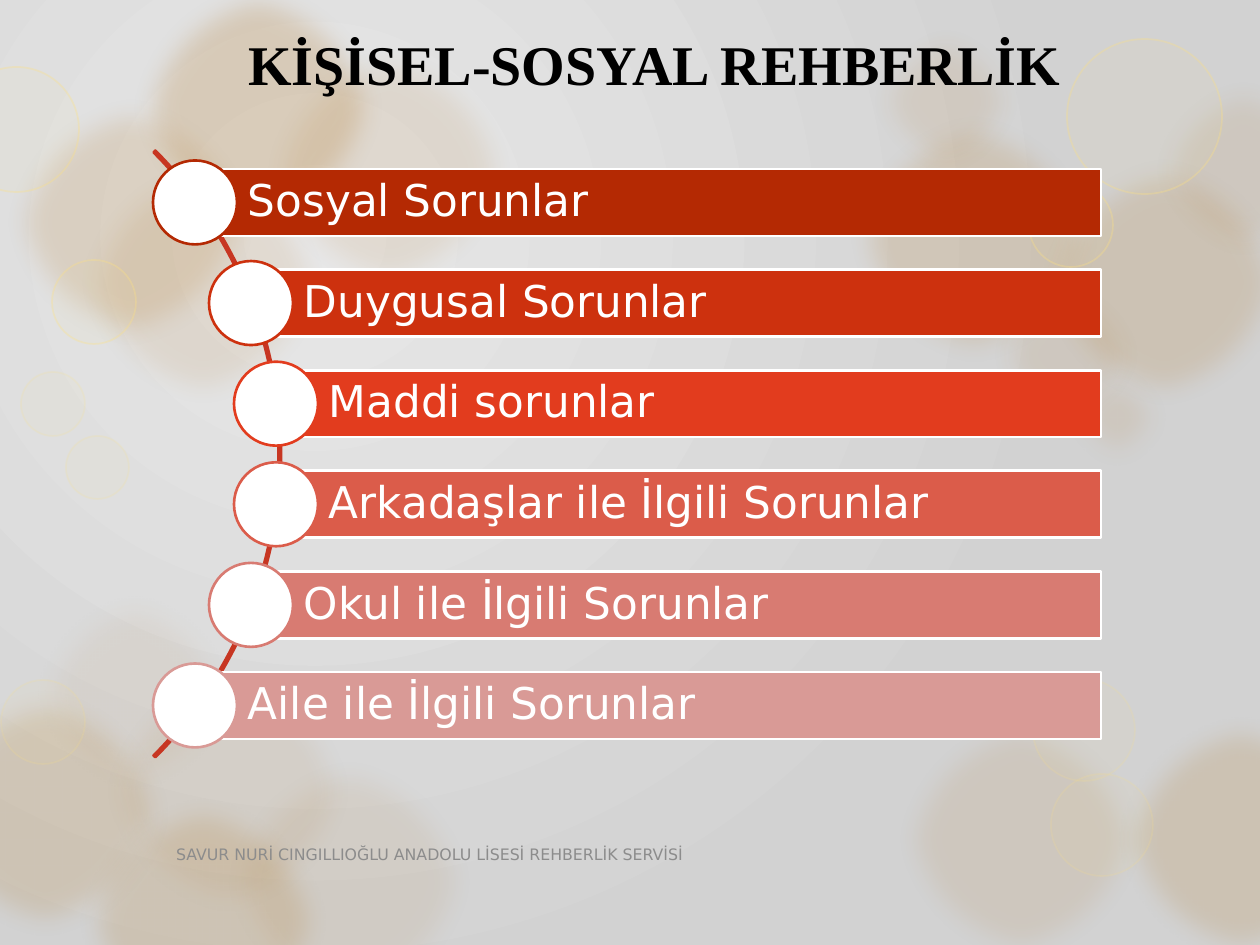
"""Builds the slide on personal and social guidance topics."""
from lxml import etree
from pptx import Presentation
from pptx import util as u
from pptx.dml.color import RGBColor
from pptx.enum import shapes, text
from pptx.oxml import ns

PX = 914400 // 126
WIDTH, HEIGHT = 1260, 945

WHITE = RGBColor(0xFF, 0xFF, 0xFF)
BLACK = RGBColor(0x00, 0x00, 0x00)
GREY = RGBColor(0x8C, 0x8C, 0x8C)
LIGHT = RGBColor(0xE7, 0xE7, 0xE7)
DARK = RGBColor(0xD2, 0xD2, 0xD2)
BROWN = RGBColor(0xAE, 0x6D, 0x11)
SAND = RGBColor(0xF1, 0xBD, 0x74)
YELLOW = RGBColor(0xFF, 0xE2, 0x81)
ARC_RED = RGBColor(0xC7, 0x36, 0x22)

TITLE = "KİŞİSEL-SOSYAL REHBERLİK"
FOOTER = "SAVUR NURİ CINGILLIOĞLU ANADOLU LİSESİ REHBERLİK SERVİSİ"
TOPICS = [
    ("Sosyal Sorunlar", 195, RGBColor(0xB4, 0x29, 0x03)),
    ("Duygusal Sorunlar", 251, RGBColor(0xCD, 0x31, 0x0E)),
    ("Maddi sorunlar", 276, RGBColor(0xE2, 0x3C, 0x1E)),
    ("Arkadaşlar ile İlgili Sorunlar", 276, RGBColor(0xDB, 0x5C, 0x4A)),
    ("Okul ile İlgili Sorunlar", 251, RGBColor(0xD8, 0x7B, 0x72)),
    ("Aile ile İlgili Sorunlar", 195, RGBColor(0xD9, 0x9A, 0x96)),
]
TOPIC_TOP, TOPIC_PITCH, BAR_HEIGHT, BAR_RIGHT, DOT = 169, 100.6, 67, 1101, 84

# fill, fill opacity, line (colour, points, opacity), blur, circles (left, top, diameter)
BUBBLES = [
    (BROWN, 8, None, 25, [(97, 660, 263), (218, 751, 263)]),
    (BROWN, 10, None, 25, [(72, 151, 263), (258, 39, 263), (890, 708, 263)]),
    (BROWN, 15, None, 25, [(0, 91, 263), (1033, 151, 263), (843, 108, 263)]),
    (BROWN, 16, None, 25, [(72, 790, 263), (1110, 708, 263), (-86, 682, 263)]),
    (BROWN, 20, None, 25, [(127, -23, 263)]),
    (BROWN, 10, (SAND, 14, 6), 25, [(1157, 82, 173), (874, 29, 144),
                                    (994, 282, 144), (1067, 367, 100)]),
    (BROWN, 6, (SAND, 14, 4), 25, [(38, 596, 193)]),
    (YELLOW, 5, (YELLOW, 1, 15), 0, [(1, 680, 84), (1051, 774, 102), (1033, 679, 102),
                                     (21, 372, 64), (66, 436, 63)]),
    (YELLOW, 5, (YELLOW, 1, 30), 0, [(-46, 67, 125), (52, 260, 84),
                                     (1067, 39, 155), (1029, 183, 84)]),
]


def px(*lengths):
    return [round(length * PX) for length in lengths]


def add_preset(slide, kind, box, fill, line=None, points=1.5):
    shape = slide.shapes.add_shape(kind, *px(*box))
    shape.shadow.inherit = False
    if fill is None:
        shape.fill.background()
    else:
        shape.fill.solid()
        shape.fill.fore_color.rgb = fill
    if line is None:
        shape.line.fill.background()
    else:
        shape.line.color.rgb = line
        shape.line.width = u.Pt(points)
    return shape


def write(shape, words, font, anchor, margins=(13, 6, 13, 6), spacing=None):
    frame = shape.text_frame
    left, top, right, bottom = px(*margins)
    settings = {"word_wrap": True, "vertical_anchor": anchor, "margin_left": left,
                "margin_top": top, "margin_right": right, "margin_bottom": bottom}
    for name, value in settings.items():
        setattr(frame, name, value)
    paragraph = frame.paragraphs[0]
    paragraph.alignment = text.PP_ALIGN.LEFT
    paragraph.line_spacing = spacing
    run = paragraph.add_run()
    run.text = words
    run.font.color.rgb = font["color"]
    for name in ("name", "size", "bold"):
        setattr(run.font, name, font[name])


def add_bubble(slide, fill, opacity, line, blur, circle):
    left, top, size = circle
    shape = add_preset(slide, shapes.MSO_SHAPE.OVAL, (left, top, size, size),
                       fill, *(line or ())[:2])
    opacities = [opacity] + ([line[2]] if line else [])
    for color, percent in zip(shape.element.iter(ns.qn("a:srgbClr")), opacities):
        etree.SubElement(color, ns.qn("a:alpha"), val=str(percent * 1000))
    if blur:
        effects = next(shape.element.iter(ns.qn("a:effectLst")))
        etree.SubElement(effects, ns.qn("a:softEdge"), rad=str(blur * PX))


def paint_background(slide):
    fill = slide.background.fill
    fill.gradient()
    for stop, color in zip(fill.gradient_stops, (LIGHT, DARK)):
        stop.color.rgb = color
    gradient = next(slide.element.iter(ns.qn("a:gradFill")))
    gradient.remove(gradient.find(ns.qn("a:lin")))
    circle = etree.SubElement(gradient, ns.qn("a:path"), path="circle")
    etree.SubElement(circle, ns.qn("a:fillToRect"),
                     l="50000", t="50000", r="100000", b="100000")


def add_topics(slide):
    arc = add_preset(slide, shapes.MSO_SHAPE.BLOCK_ARC, (-577, 25, 858, 858), None, ARC_RED)
    for index, value in enumerate((189, 27, 0.003)):
        arc.adjustments[index] = value
    font = {"name": "DejaVu Sans", "size": u.Pt(25), "bold": False, "color": WHITE}
    for row, (words, left, color) in enumerate(TOPICS):
        top = TOPIC_TOP + row * TOPIC_PITCH
        bar = add_preset(slide, shapes.MSO_SHAPE.RECTANGLE,
                         (left, top, BAR_RIGHT - left, BAR_HEIGHT), color, WHITE)
        write(bar, words, font, text.MSO_ANCHOR.MIDDLE, (53, 9, 9, 9), 0.9)
        add_preset(slide, shapes.MSO_SHAPE.OVAL,
                   (left - DOT / 2, top + (BAR_HEIGHT - DOT) / 2, DOT, DOT), WHITE, color)


def main():
    presentation = Presentation()
    presentation.slide_width, presentation.slide_height = px(WIDTH, HEIGHT)
    slide = presentation.slides.add_slide(presentation.slide_layouts[6])
    paint_background(slide)
    for *style, circles in BUBBLES:
        for circle in circles:
            add_bubble(slide, *style, circle)
    footer = slide.shapes.add_textbox(*px(163, 820, 724, 50))
    write(footer, FOOTER, {"name": "DejaVu Sans", "size": u.Pt(9), "bold": False,
                           "color": GREY}, text.MSO_ANCHOR.BOTTOM)
    title = slide.shapes.add_textbox(*px(194, 0, 981, 127))
    write(title, TITLE, {"name": "Times New Roman", "size": u.Pt(32), "bold": True,
                         "color": BLACK}, text.MSO_ANCHOR.MIDDLE, (54, 6, 13, 6))
    add_topics(slide)
    presentation.save("out.pptx")


if __name__ == "__main__":
    main()
